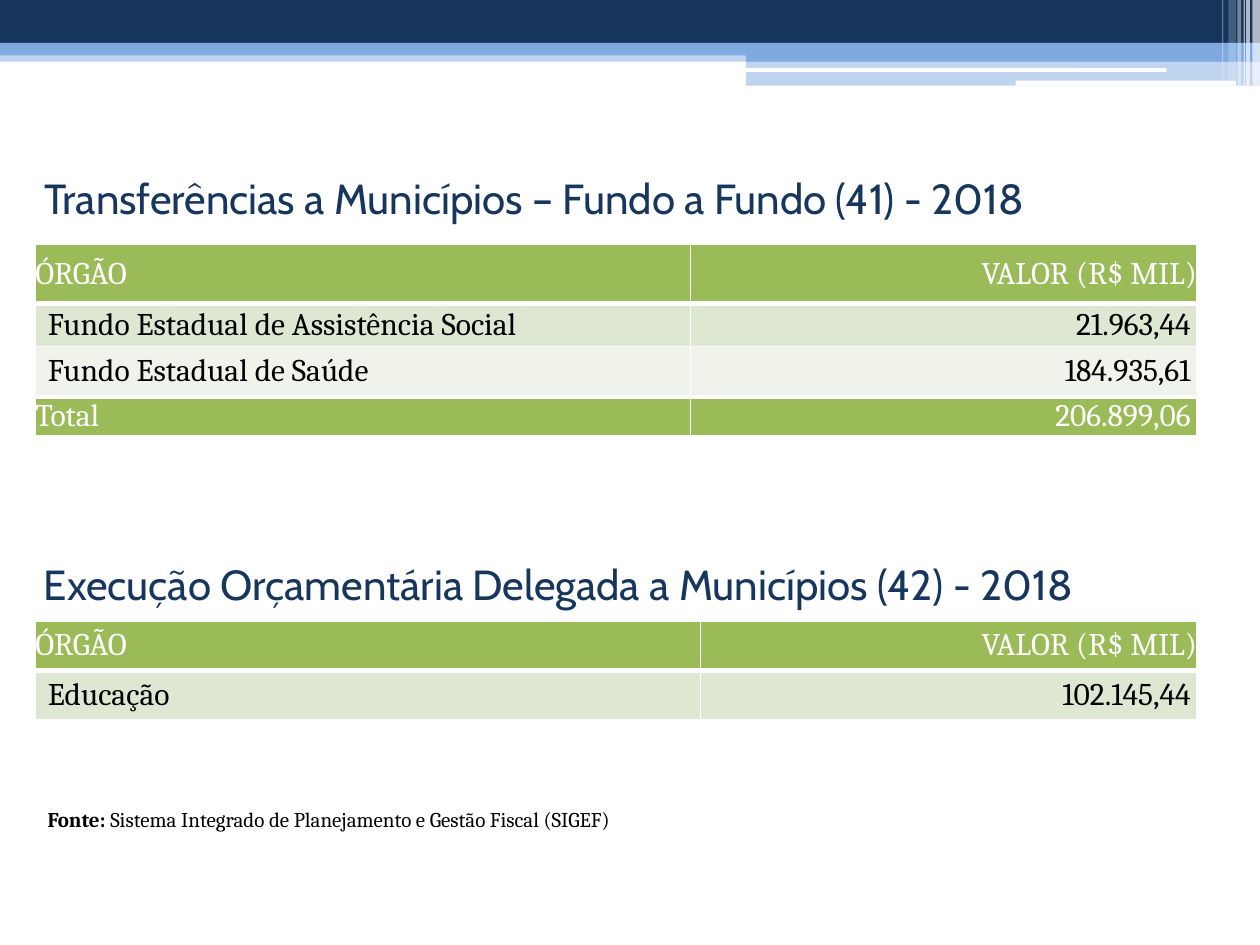
import pptx
import pptx.util
import pptx.dml.color
import pptx.enum.shapes
import pptx.enum.text
import pptx.oxml
import pptx.oxml.ns

NAVY, BLUE, WHITE, BLACK = "17365D", "80AADF", "FFFFFF", "000000"
GREEN, PALE, MIST = "9BBB59", "DEE7D1", "EFF3EA"
BANDS = [
    (0, 0.4, 10, 0.09, BLUE, 50),
    (0, 0, 10, 0.34, NAVY, 100),
    (0, 0.34, 10, 0.1, BLUE, 100),
    (5.92, 0.39, 4.08, 0.1, BLUE, 100),
    (5.92, 0.48, 4.08, 0.2, BLUE, 50),
]
PILLS = [(5.91, 0.54, 3.35, 0.03, WHITE, 100), (8.06, 0.64, 1.75, 0.04, WHITE, 100)]
STRIPES = [
    (9.94, 0.06, 0.68, 65),
    (9.89, 0.03, 0.68, 65),
    (9.87, 0.01, 0.68, 60),
    (9.82, 0.03, 0.68, 40),
    (9.75, 0.06, 0.64, 20),
    (9.7, 0.01, 0.64, 30),
]
HEAD = ("ÓRGÃO", "VALOR (R$ MIL)")
TITLE = "Transferências a Municípios – Fundo a Fundo (41) - 2018"
SECOND = "Execução Orçamentária Delegada a Municípios (42) - 2018"
SOURCE = [("Fonte: ", True), ("Sistema Integrado de Planejamento e Gestão Fiscal (SIGEF)", False)]
TABLES = [
    {"top": 1.94, "cols": (5.2, 4.02), "rows": (0.47, 0.34, 0.4, 0.31), "data": [
        HEAD,
        ("Fundo Estadual de Assistência Social", "21.963,44"),
        ("Fundo Estadual de Saúde", "184.935,61"),
        ("Total", "206.899,06"),
    ]},
    {"top": 4.93, "cols": (5.28, 3.94), "rows": (0.39, 0.39), "data": [
        HEAD,
        ("Educação", "102.145,44"),
    ]},
]
LEFT = 0.28
inch = pptx.util.Inches
shape = pptx.enum.shapes.MSO_SHAPE
align = pptx.enum.text.PP_ALIGN
middle = pptx.enum.text.MSO_ANCHOR.MIDDLE


def paint(fill, tone):
    fill.solid()
    fill.fore_color.rgb = pptx.dml.color.RGBColor.from_string(tone)


def style(run, face, size, tone, bold=False):
    form = {"name": face, "size": pptx.util.Pt(size), "bold": bold}
    for key, value in form.items():
        setattr(run.font, key, value)
    paint(run.font.fill, tone)


def block(slide, kind, x, y, wide, high, tone, solid):
    bar = slide.shapes.add_shape(kind, *map(inch, (x, y, wide, high)))
    bar.shadow.inherit = False
    bar.line.fill.background()
    paint(bar.fill, tone)
    if solid < 100:
        hue = bar.fill._xPr.find(".//" + pptx.oxml.ns.qn("a:srgbClr"))
        alpha = pptx.oxml.parse_xml(f'<a:alpha {pptx.oxml.ns.nsdecls("a")} val="{solid * 1000}"/>')
        hue.append(alpha)


def write(slide, box, runs, face, size, tone):
    frame = slide.shapes.add_textbox(*map(inch, box)).text_frame
    frame.word_wrap = True
    for text, bold in runs:
        run = frame.paragraphs[0].add_run()
        run.text = text
        style(run, face, size, tone, bold)


def edge(cell, widths):
    props = cell._tc.get_or_add_tcPr()
    for side, width in widths.items():
        props.append(pptx.oxml.parse_xml(
            f'<a:ln{side} {pptx.oxml.ns.nsdecls("a")} w="{width * 12700}"><a:solidFill>'
            f'<a:srgbClr val="{WHITE}"/></a:solidFill></a:ln{side}>'))


def grid(slide, top, cols, rows, data):
    size = map(inch, (LEFT, top, sum(cols), sum(rows)))
    table = slide.shapes.add_table(len(rows), len(cols), *size).table
    for col, wide in zip(table.columns, cols):
        col.width = inch(wide)
    for r, (high, line) in enumerate(zip(rows, data)):
        table.rows[r].height = inch(high)
        head, total = r == 0, line[0] == "Total"
        strong = head or total
        for c, text in enumerate(line):
            cell = table.cell(r, c)
            edge(cell, {"L": 1, "R": 1, "T": 3 if total else 1, "B": 3 if head else 1})
            paint(cell.fill, GREEN if strong else (MIST, PALE)[r % 2])
            form = {
                "margin_left": inch(0 if strong or c else 0.1),
                "margin_right": inch(0.05 if c and not head else 0),
                "margin_top": 0,
                "margin_bottom": 0,
                "vertical_anchor": middle,
            }
            for key, value in form.items():
                setattr(cell, key, value)
            para = cell.text_frame.paragraphs[0]
            para.alignment = align.RIGHT if c else align.LEFT
            run = para.add_run()
            run.text = text
            style(run, "Cambria", 18, WHITE if strong else BLACK)


def main():
    deck = pptx.Presentation()
    deck.slide_width, deck.slide_height = inch(10), inch(7.5)
    slide = deck.slides.add_slide(deck.slide_layouts[5])
    for band in BANDS:
        block(slide, shape.RECTANGLE, *band)
    for pill in PILLS:
        block(slide, shape.ROUNDED_RECTANGLE, *pill)
    for x, wide, high, solid in STRIPES:
        block(slide, shape.RECTANGLE, x, 0, wide, high, WHITE, solid)

    title = slide.shapes.title
    for key, value in zip(("left", "top", "width", "height"), (0.25, 1.23, 9.29, 0.67)):
        setattr(title, key, inch(value))
    title.text_frame.text = TITLE
    title.text_frame.vertical_anchor = middle
    para = title.text_frame.paragraphs[0]
    para.alignment = align.LEFT
    style(para.runs[0], "Cabin", 24, NAVY)

    for table in TABLES:
        grid(slide, **table)
    write(slide, (0.25, 4.38, 9.69, 0.5), [(SECOND, False)], "Cabin", 24, NAVY)
    write(slide, (LEFT, 6.35, 7, 0.3), SOURCE, "Cambria", 12, BLACK)
    deck.save("out.pptx")


if __name__ == "__main__":
    main()
